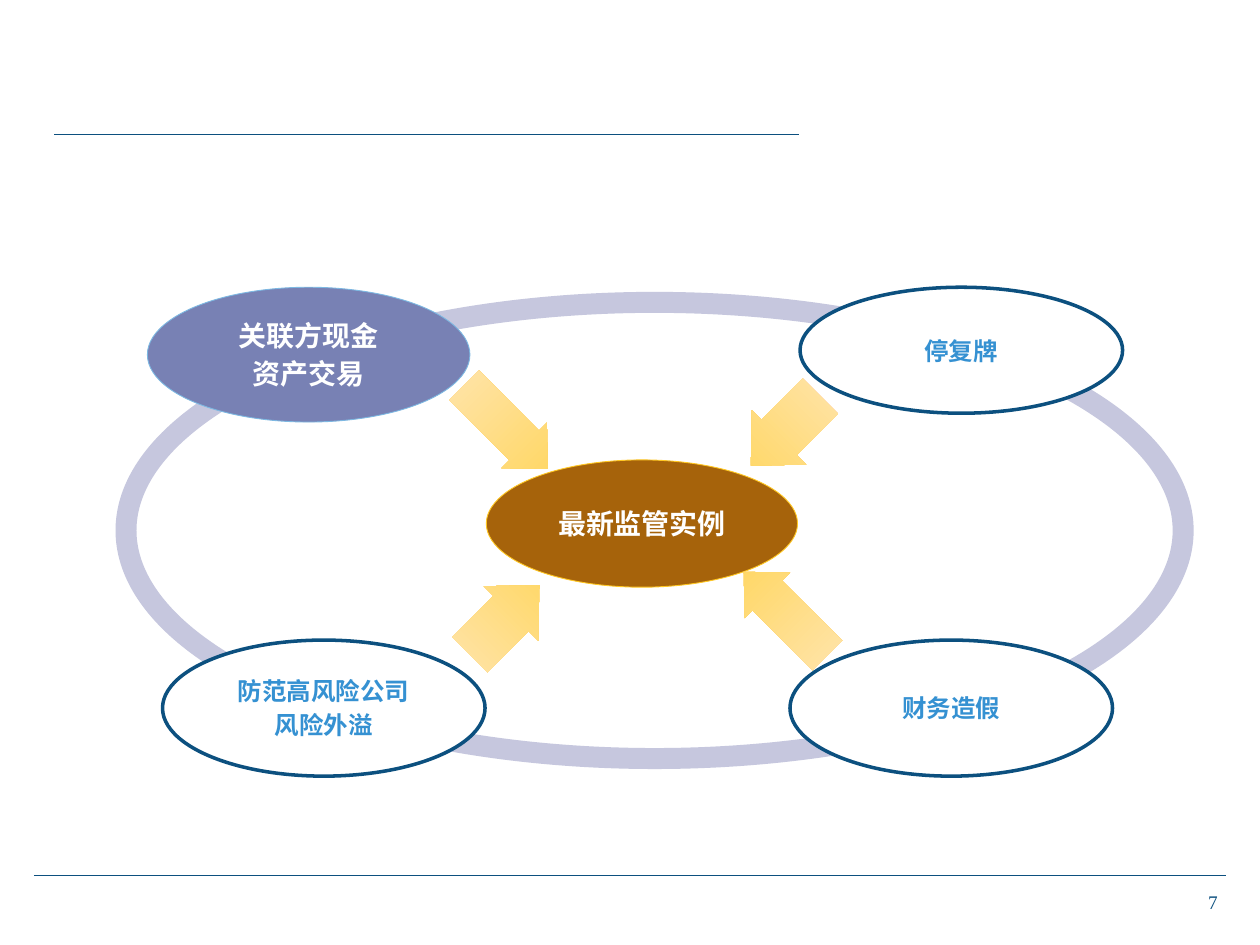
from dataclasses import dataclass

from lxml.etree import SubElement
from pptx import Presentation
from pptx.dml.color import RGBColor
from pptx.enum.shapes import MSO_CONNECTOR, MSO_SHAPE
from pptx.enum.text import MSO_ANCHOR, MSO_AUTO_SIZE, PP_ALIGN
from pptx.oxml.ns import qn
from pptx.util import Inches, Pt

HEX = {
    "navy": "0C507F", "ring": "C6C7DE", "brown": "A6630B", "gold": "FFC722",
    "deep": "FFD55A", "pale": "FFE5AF", "violet": "7881B4", "sky": "7DB8E2",
    "blue": "3591D2", "white": "FFFFFF",
}


@dataclass
class Box:
    """Place and size in percent of the slide's width and height."""
    x: float
    y: float
    w: float
    h: float


@dataclass
class Oval:
    box: Box
    lines: tuple[str, ...] = ()
    fill: str | None = "white"
    edge: str = "navy"
    width: float = 2
    size: int = 14
    ink: str = "blue"


@dataclass
class Arrow:
    box: Box
    turn: int


OVALS = [
    Oval(Box(11.7, 30.4, 25.6, 14.27), ("关联方现金", "资产交易"),
         "violet", "sky", 0.5, 16, "white"),
    Oval(Box(63.5, 30.4, 25.6, 13.33), ("停复牌",)),
    Oval(Box(12.9, 67.73, 25.6, 14.4), ("防范高风险公司", "风险外溢")),
    Oval(Box(62.7, 67.73, 25.6, 14.4), ("财务造假",)),
]
RING = Oval(Box(10, 32, 83.9, 48.27), (), None, "ring", 12)
CORE = Oval(Box(38.6, 48.67, 24.7, 13.47), ("最新监管实例",),
            "brown", "gold", 0.5, 16, "white")
ARROWS = [
    Arrow(Box(59.3, 40.4, 6.1, 10.4), 225),
    Arrow(Box(37.6, 38.93, 5.1, 12.53), 135),
    Arrow(Box(59.8, 58.67, 5.1, 12.53), 315),
    Arrow(Box(37, 60.4, 6.1, 10.4), 45),
]
RULES = [Box(2.7, 92.67, 94.6, 0), Box(4.3, 14.27, 59.1, 0)]

prs = Presentation()
prs.slide_width, prs.slide_height = Inches(10), Inches(7.5)
slide = prs.slides.add_slide(prs.slide_layouts[6])
shapes = slide.shapes


def rgb(name: str) -> RGBColor:
    return RGBColor.from_string(HEX[name])


def place(box: Box) -> tuple[int, int, int, int]:
    wide, high = prs.slide_width / 100, prs.slide_height / 100
    return (round(box.x * wide), round(box.y * high),
            round(box.w * wide), round(box.h * high))


def draw_rule(box: Box) -> None:
    x, y, w, h = place(box)
    rule = shapes.add_connector(MSO_CONNECTOR.STRAIGHT, x, y, x + w, y + h)
    rule.line.color.rgb = rgb("navy")
    rule.line.width = Pt(0.5)
    SubElement(rule._element.spPr, qn("a:effectLst"))


def draw_oval(oval: Oval) -> None:
    shape = shapes.add_shape(MSO_SHAPE.OVAL, *place(oval.box))
    shape.shadow.inherit = False
    if oval.fill:
        shape.fill.solid()
        shape.fill.fore_color.rgb = rgb(oval.fill)
    else:
        shape.fill.background()
    shape.line.color.rgb = rgb(oval.edge)
    shape.line.width = Pt(oval.width)
    frame = shape.text_frame
    frame.word_wrap = True
    frame.vertical_anchor = MSO_ANCHOR.MIDDLE
    frame.margin_left = frame.margin_right = 0
    frame.margin_top = frame.margin_bottom = 0
    for i, line in enumerate(oval.lines):
        para = frame.add_paragraph() if i else frame.paragraphs[0]
        para.text = line
        para.alignment = PP_ALIGN.CENTER
        if i:
            para.space_before = Pt(2.5)
        font = para.font
        font.name, font.size, font.bold = "Arial", Pt(oval.size), True
        font.color.rgb = rgb(oval.ink)


def draw_arrow(arrow: Arrow) -> None:
    shape = shapes.add_shape(MSO_SHAPE.UP_ARROW, *place(arrow.box))
    shape.shadow.inherit = False
    shape.rotation = arrow.turn
    shape.adjustments[0], shape.adjustments[1] = 0.65, 0.52
    shape.line.fill.background()
    # Darker at the head, paler at the tail
    shape.fill.gradient()
    shape.fill.gradient_angle = 270
    for stop, name in zip(shape.fill.gradient_stops, ("deep", "pale")):
        stop.color.rgb = rgb(name)


def draw_number(box: Box, text: str) -> None:
    frame = shapes.add_textbox(*place(box)).text_frame
    frame.word_wrap = True
    frame.auto_size = MSO_AUTO_SIZE.SHAPE_TO_FIT_TEXT
    para = frame.paragraphs[0]
    para.text = text
    para.font.name, para.font.size = "Times New Roman", Pt(11)
    para.font.color.rgb = rgb("navy")


# Header and footer rules
for rule in RULES:
    draw_rule(rule)

# Ring, centre and inward arrows
draw_oval(RING)
draw_oval(CORE)
for arrow in ARROWS:
    draw_arrow(arrow)

# Topics around the ring
for oval in OVALS:
    draw_oval(oval)

# Page number
draw_number(Box(94.9, 93.6, 3.2, 3.87), "7")

prs.save("out.pptx")
